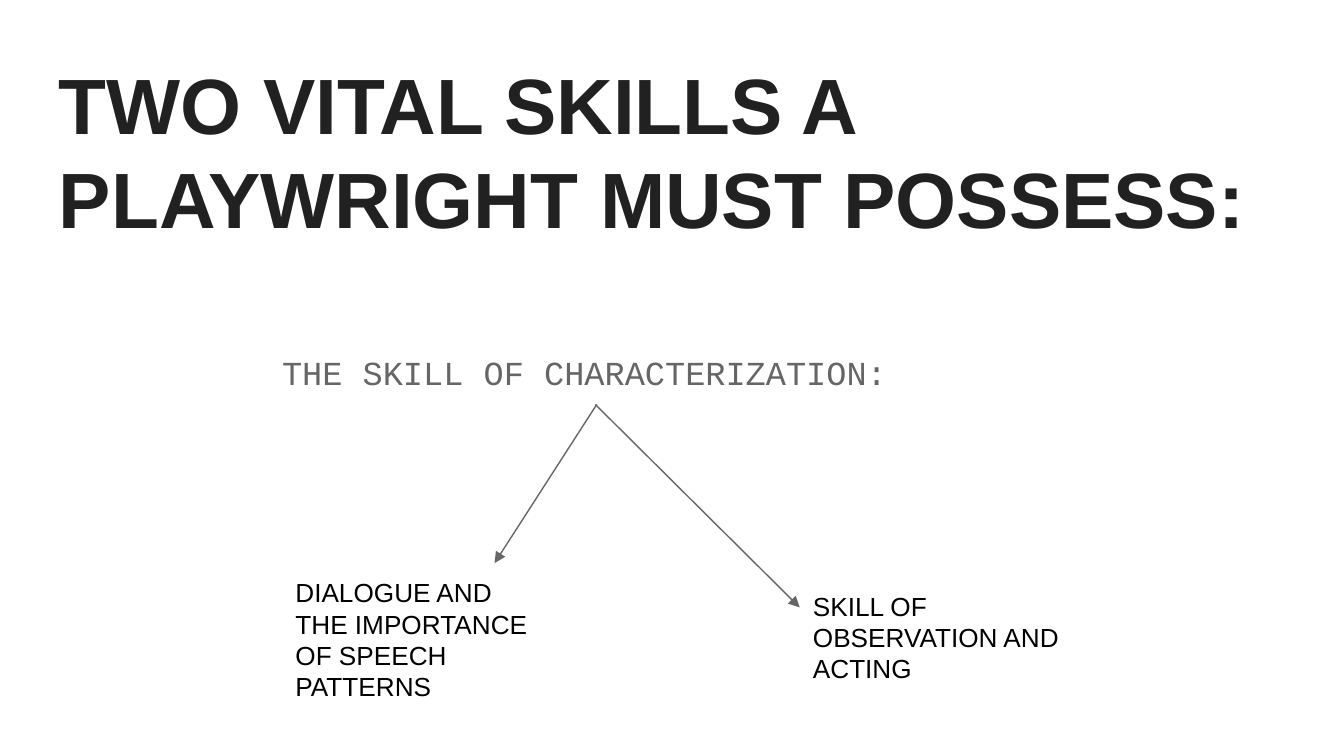
from dataclasses import dataclass

from lxml import etree
from pptx import Presentation
from pptx.dml.color import RGBColor
from pptx.enum.shapes import MSO_CONNECTOR
from pptx.enum.text import MSO_ANCHOR
from pptx.oxml.ns import qn
from pptx.util import Inches, Pt

STRAIGHT = MSO_CONNECTOR.STRAIGHT
TOP = MSO_ANCHOR.TOP
COLORS = {"title": "212121", "grey": "666666", "black": "000000"}


@dataclass
class TextBlock:
    text: str
    left: float
    top: float
    width: float
    height: float
    size: float = 14
    color: str = "black"
    font: str = "Arial"
    bold: bool = False
    line_spacing: float = 1.0
    margin: float = 0
    first_line: float = 0


@dataclass
class Arrow:
    start: tuple[float, float]
    end: tuple[float, float]


TEXTS = [
    TextBlock("TWO VITAL SKILLS A PLAYWRIGHT MUST POSSESS:", 0.34, 0.32, 9.32, 0.88,
              size=42, color="title", bold=True),
    TextBlock("THE SKILL OF CHARACTERIZATION:", 0, 2.47, 9.32, 2.88, size=18,
              color="grey", font="Courier New", line_spacing=1.15,
              margin=1.5, first_line=0.5),
    TextBlock("DIALOGUE AND THE IMPORTANCE OF SPEECH PATTERNS", 2.1, 4.19, 1.94, 1.35),
    TextBlock("SKILL OF OBSERVATION AND ACTING", 5.95, 4.29, 2.35, 1.16),
]
ARROWS = [Arrow((4.43, 3.01), (5.95, 4.52)), Arrow((4.44, 3.01), (3.68, 4.19))]


def add_text(slide, block: TextBlock) -> None:
    box = slide.shapes.add_textbox(Inches(block.left), Inches(block.top),
                                   Inches(block.width), Inches(block.height))
    frame = box.text_frame
    frame.word_wrap = True
    frame.vertical_anchor = TOP
    frame.margin_left = frame.margin_right = Inches(0.1)
    frame.margin_top = frame.margin_bottom = Inches(0.1)
    paragraph = frame.paragraphs[0]
    paragraph.line_spacing = block.line_spacing
    properties = paragraph._p.get_or_add_pPr()
    properties.set("marL", str(Inches(block.margin)))
    properties.set("indent", str(Inches(block.first_line)))
    run = paragraph.add_run()
    run.text = block.text
    run.font.name = block.font
    run.font.size = Pt(block.size)
    run.font.bold = block.bold
    run.font.color.rgb = RGBColor.from_string(COLORS[block.color])


def add_arrow(slide, arrow: Arrow) -> None:
    points = [Inches(value) for value in arrow.start + arrow.end]
    connector = slide.shapes.add_connector(STRAIGHT, *points)
    connector.line.color.rgb = RGBColor.from_string(COLORS["grey"])
    connector.line.width = Pt(0.75)
    outline = connector.line._get_or_add_ln()
    etree.SubElement(outline, qn("a:tailEnd"), type="triangle")
    etree.SubElement(connector._element.spPr, qn("a:effectLst"))


def main() -> None:
    deck = Presentation()
    # Widescreen, 16:9
    deck.slide_width = Inches(10)
    deck.slide_height = Inches(10 * 9 / 16)
    slide = deck.slides.add_slide(deck.slide_layouts[6])

    # Heading, skill and its two branches
    for block in TEXTS:
        add_text(slide, block)

    # Arrows from the skill to its branches
    for arrow in ARROWS:
        add_arrow(slide, arrow)

    deck.save("out.pptx")


if __name__ == "__main__":
    main()
